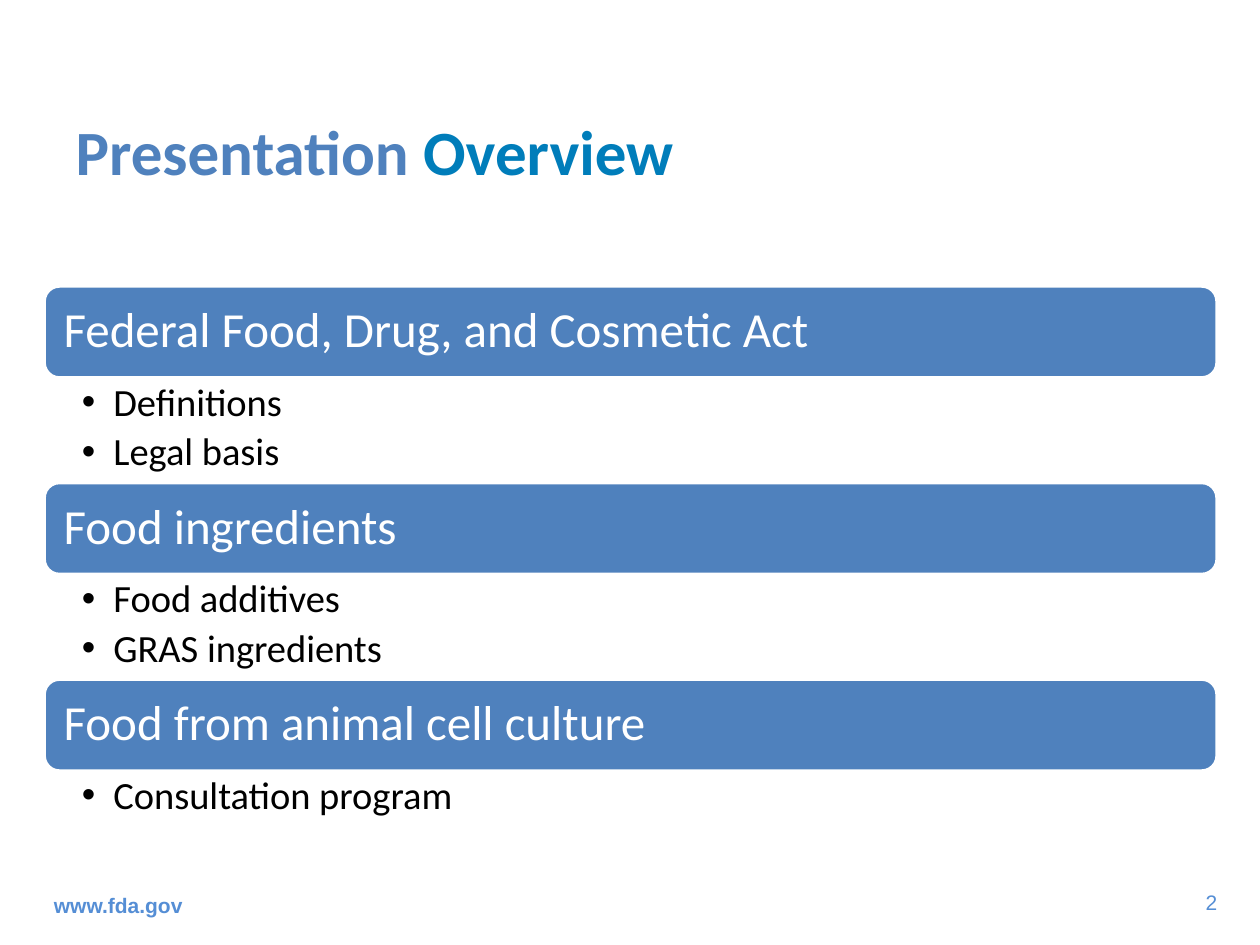
from dataclasses import dataclass

from lxml.etree import SubElement
from pptx import Presentation
from pptx.dml.color import RGBColor as RGB
from pptx.enum.shapes import MSO_SHAPE as Shape
from pptx.enum.text import MSO_ANCHOR as Anchor, MSO_AUTO_SIZE as AutoSize, PP_ALIGN as Align
from pptx.oxml.ns import qn
from pptx.util import Inches, Pt


@dataclass(frozen=True)
class Theme:
    heading_font: str = "Calibri"
    footer_font: str = "Arial"
    blue: RGB = RGB(0x4F, 0x81, 0xBD)
    accent: RGB = RGB(0x00, 0x7D, 0xBA)
    footer: RGB = RGB(0x55, 0x8E, 0xD5)
    white: RGB = RGB(0xFF, 0xFF, 0xFF)
    black: RGB = RGB(0x00, 0x00, 0x00)
    title_size: int = 36
    topic_size: int = 28
    point_size: int = 22
    footer_size: int = 12


class OverviewSlide:
    """Holds the style and the current slide."""

    def __init__(self, slide, theme):
        self.slide = slide
        self.theme = theme

    def style(self, font, size, color, name=None, bold=False):
        font.name = name or self.theme.heading_font
        font.size = Pt(size)
        font.color.rgb = color
        font.bold = bold

    def title(self, parts, left, top, width, height):
        heading = self.slide.shapes.title
        heading.left, heading.top = Inches(left), Inches(top)
        heading.width, heading.height = Inches(width), Inches(height)
        frame = heading.text_frame
        frame.auto_size = AutoSize.NONE
        frame.vertical_anchor = Anchor.MIDDLE
        line = frame.paragraphs[0]
        line.alignment = Align.LEFT
        for words, color in parts:
            run = line.add_run()
            run.text = words
            self.style(run.font, self.theme.title_size, color, bold=True)

    def text_box(self, left, top, width, height, wrap=True):
        box = self.slide.shapes.add_textbox(
            Inches(left), Inches(top), Inches(width), Inches(height))
        box.text_frame.word_wrap = wrap
        return box.text_frame

    def footer(self, words, left, top, width, height,
               align=Align.LEFT, anchor=Anchor.TOP, bold=False, wrap=True):
        frame = self.text_box(left, top, width, height, wrap)
        frame.vertical_anchor = anchor
        line = frame.paragraphs[0]
        line.text = words
        line.alignment = align
        theme = self.theme
        self.style(line.font, theme.footer_size, theme.footer, theme.footer_font, bold)

    def topic_bar(self, words, left, top, width, height):
        bar = self.slide.shapes.add_shape(
            Shape.ROUNDED_RECTANGLE,
            Inches(left), Inches(top), Inches(width), Inches(height))
        bar.shadow.inherit = False
        bar.fill.solid()
        bar.fill.fore_color.rgb = self.theme.blue
        bar.line.color.rgb = self.theme.white
        bar.line.width = Pt(2)
        frame = bar.text_frame
        frame.word_wrap = True
        frame.vertical_anchor = Anchor.MIDDLE
        frame.margin_left = frame.margin_right = Inches(0.12)
        frame.margin_top = frame.margin_bottom = Inches(0.12)
        line = frame.paragraphs[0]
        line.text = words
        line.alignment = Align.LEFT
        line.line_spacing = 0.9
        self.style(line.font, self.theme.topic_size, self.theme.white)

    def points(self, items, left, top, width, height):
        frame = self.text_box(left, top, width, height)
        frame.margin_left, frame.margin_right = Inches(0.3), Inches(0.22)
        frame.margin_top = frame.margin_bottom = Inches(0.04)
        for index, item in enumerate(items):
            line = frame.paragraphs[0] if index == 0 else frame.add_paragraph()
            line.text = item
            line.level = 1
            line.line_spacing = 0.9
            line.space_after = Pt(0.2 * self.theme.point_size)
            # Hanging bullet
            props = line._p.get_or_add_pPr()
            props.set("marL", str(Inches(0.25)))
            props.set("indent", str(-Inches(0.25)))
            SubElement(props, qn("a:buFont"), typeface="Arial")
            SubElement(props, qn("a:buChar"), char="•")
            self.style(line.font, self.theme.point_size, self.theme.black)


TOPICS = [
    ("Federal Food, Drug, and Cosmetic Act", ["Definitions", "Legal basis"]),
    ("Food ingredients", ["Food additives", "GRAS ingredients"]),
    ("Food from animal cell culture", ["Consultation program"]),
]
LEFT, TOP, WIDTH = 0.35, 2.27, 9.31
BAR_HEIGHT, PITCH = 0.73, 1.56
POINT_HEIGHT, POINTS_PADDING = 0.31, 0.2


def main():
    deck = Presentation()
    deck.slide_width, deck.slide_height = Inches(10), Inches(7.5)
    theme = Theme()
    overview = OverviewSlide(deck.slides.add_slide(deck.slide_layouts[5]), theme)

    # Title
    overview.title([("Presentation", theme.blue), (" Overview", theme.accent)],
                   0.5, 0.57, 9, 1.25)

    # Topics, each a bar with its points below
    for index, (topic, items) in enumerate(TOPICS):
        top = TOP + index * PITCH
        overview.topic_bar(topic, LEFT, top, WIDTH, BAR_HEIGHT)
        overview.points(items, LEFT, top + BAR_HEIGHT, WIDTH,
                        len(items) * POINT_HEIGHT + POINTS_PADDING)

    # Footer: web address and page number
    overview.footer("www.fda.gov", 0.33, 6.98, 3.17, 0.4,
                    anchor=Anchor.MIDDLE, bold=True)
    overview.footer("2", 9.35, 7.01, 0.41, 0.3, align=Align.RIGHT, wrap=False)

    deck.save("out.pptx")


if __name__ == "__main__":
    main()
